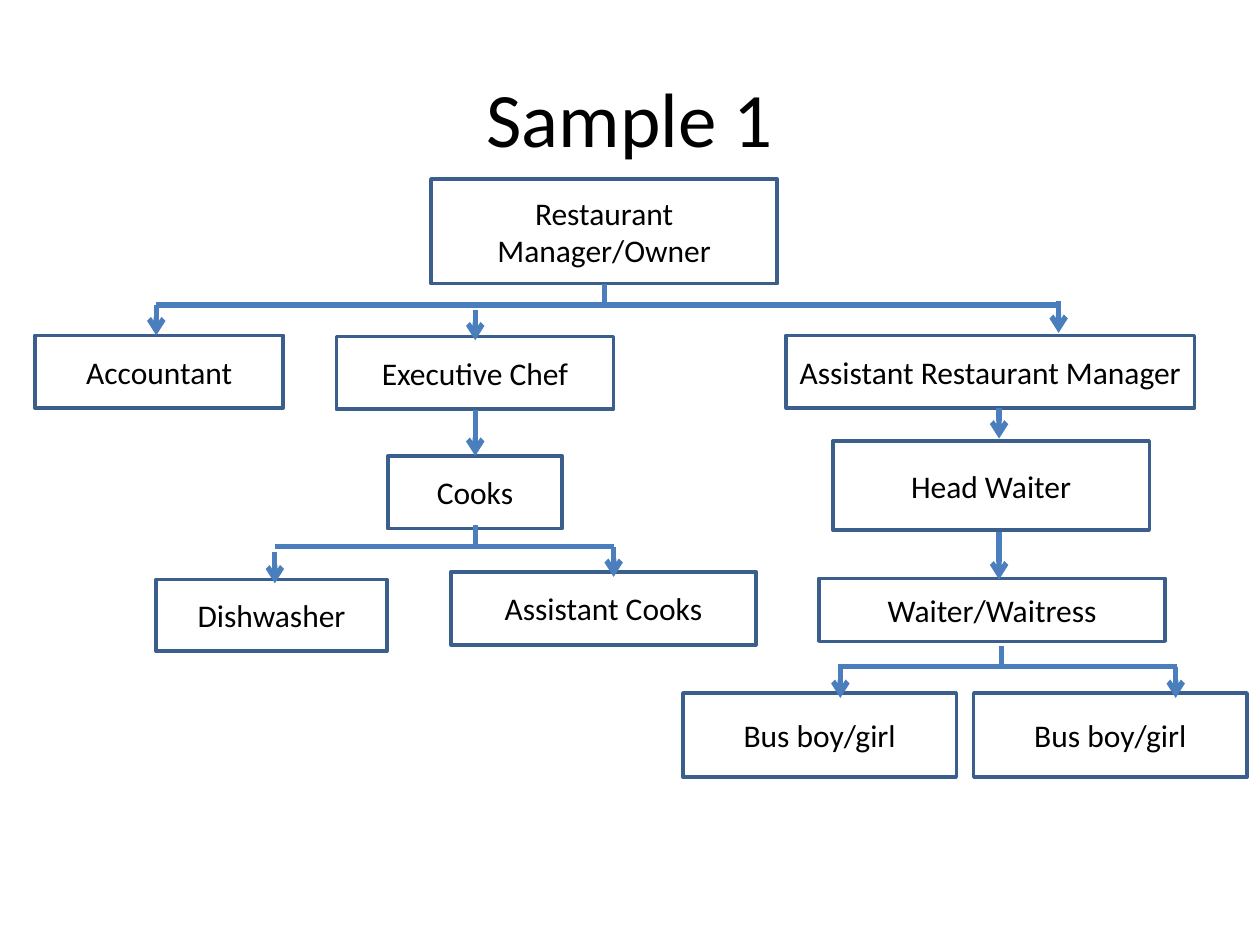
import pptx
import pptx.dml.color
import pptx.enum.shapes
import pptx.enum.text
import pptx.oxml
import pptx.oxml.ns
import pptx.util

Cm = pptx.util.Cm
Pt = pptx.util.Pt


def tint(code):
    return pptx.dml.color.RGBColor.from_string(code)


class Chart:
    """Draw boxes and links of a staff chart in one style."""

    face, ink, paper = "Calibri", "000000", "FFFFFF"
    edge, link = "3A5F8C", "4B7EBC"

    def __init__(self, slide):
        self.slide = slide

    def label(self, shape, text, size):
        frame = shape.text_frame
        look = {"word_wrap": True, "vertical_anchor": pptx.enum.text.MSO_ANCHOR.MIDDLE}
        for name, value in look.items():
            setattr(frame, name, value)
        para = frame.paragraphs[0]
        para.text = text
        para.alignment = pptx.enum.text.PP_ALIGN.CENTER
        for name, value in {"name": self.face, "size": Pt(size)}.items():
            setattr(para.font, name, value)
        para.font.color.rgb = tint(self.ink)

    def title(self, text, *place):
        self.label(self.slide.shapes.add_textbox(*map(Cm, place)), text, 44)

    def box(self, text, *place):
        kind = pptx.enum.shapes.MSO_SHAPE.RECTANGLE
        shape = self.slide.shapes.add_shape(kind, *map(Cm, place))
        shape.shadow.inherit = False
        shape.fill.solid()
        shape.fill.fore_color.rgb = tint(self.paper)
        shape.line.color.rgb = tint(self.edge)
        shape.line.width = Pt(2)
        self.label(shape, text, 18)

    def line(self, x1, y1, x2, y2, head=False):
        kind = pptx.enum.shapes.MSO_CONNECTOR.STRAIGHT
        wire = self.slide.shapes.add_connector(kind, *map(Cm, (x1, y1, x2, y2)))
        wire.line.color.rgb = tint(self.link)
        wire.line.width = Pt(3)
        props = wire.element.spPr
        space = pptx.oxml.ns.nsdecls("a")
        if head:
            tail = pptx.oxml.parse_xml(f'<a:tailEnd {space} type="arrow"/>')
            props.find(pptx.oxml.ns.qn("a:ln")).append(tail)
        props.append(pptx.oxml.parse_xml(f"<a:effectLst {space}/>"))

    def drop(self, x, top, end, head=True):
        self.line(x, top, x, end, head)


def main():
    deck = pptx.Presentation()
    deck.slide_width, deck.slide_height = Cm(25.4), Cm(19.05)
    chart = Chart(deck.slides.add_slide(deck.slide_layouts[6]))
    chart.title("Sample 1", 1.27, 0.76, 22.86, 3.18)

    roles = [
        ("Restaurant Manager/Owner", 8.69, 3.61, 6.98, 2.11),
        ("Accountant", 0.71, 6.76, 5, 1.47),
        ("Executive Chef", 6.78, 6.78, 5.59, 1.47),
        ("Assistant Restaurant Manager", 15.85, 6.76, 8.23, 1.47),
        ("Head Waiter", 16.79, 8.89, 6.38, 1.8),
        ("Dishwasher", 3.15, 11.68, 4.65, 1.45),
        ("Cooks", 7.82, 9.19, 3.51, 1.47),
        ("Waiter/Waitress", 16.51, 11.66, 6.98, 1.27),
        ("Assistant Cooks", 9.09, 11.53, 6.15, 1.47),
        ("Bus boy/girl", 13.77, 13.97, 5.51, 1.7),
        ("Bus boy/girl", 19.63, 13.97, 5.51, 1.7),
    ]
    for role in roles:
        chart.box(*role)

    forks = [
        (3.15, 21.39, 6.15, 12.19, 5.72),
        (5.54, 12.37, 11.02, 9.58, 10.59),
        (16.89, 23.72, 13.44, 20.19, 13.03),
    ]
    for left, right, level, stem, top in forks:
        chart.line(left, level, right, level)
        chart.drop(stem, top, level, head=False)

    drops = [
        (3.15, 6.15, 6.76), (21.34, 6.07, 6.71), (9.58, 6.25, 6.86),
        (9.58, 8.26, 9.19), (20.14, 8.23, 8.84), (20.14, 10.72, 11.68),
        (12.37, 11.02, 11.63), (5.54, 11.13, 11.76),
        (16.94, 13.44, 14.07), (23.7, 13.44, 14.07),
    ]
    for drop in drops:
        chart.drop(*drop)

    deck.save("out.pptx")


if __name__ == "__main__":
    main()
